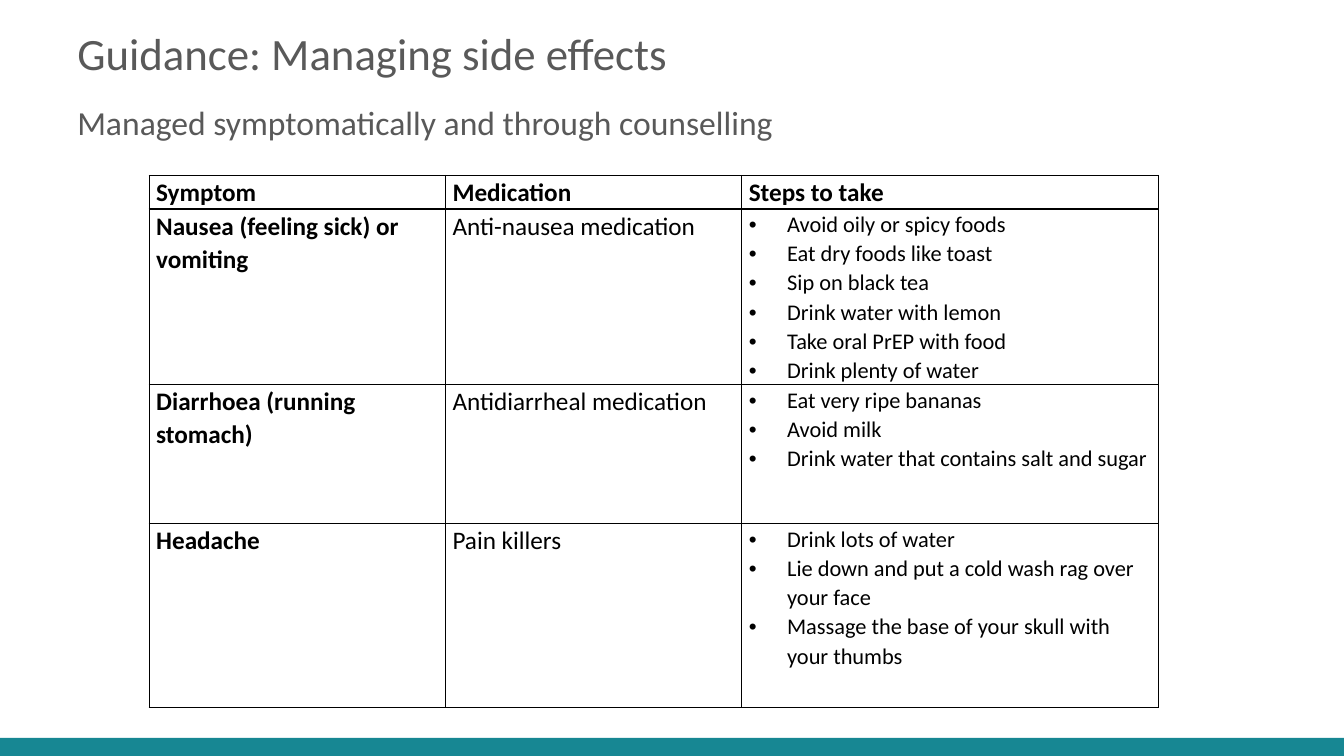
from lxml import etree
from pptx import Presentation
from pptx.dml.color import RGBColor
from pptx.enum.shapes import MSO_SHAPE
from pptx.enum.text import MSO_ANCHOR, MSO_AUTO_SIZE, PP_ALIGN
from pptx.oxml.ns import qn
from pptx.util import Inches, Pt

RECTANGLE = MSO_SHAPE.RECTANGLE
TOP = MSO_ANCHOR.TOP
LEFT = PP_ALIGN.LEFT
NO_AUTOFIT = MSO_AUTO_SIZE.NONE

WHITE = RGBColor(0xFF, 0xFF, 0xFF)
BLACK = RGBColor(0x00, 0x00, 0x00)
GREY = RGBColor(0x59, 0x59, 0x59)
TEAL = RGBColor(0x17, 0x87, 0x93)

FONT = "Calibri"
GRID_COLUMNS, GRID_ROWS = 80, 45
TITLE_ONLY = 5

TITLE_LINES = [
    ("Guidance: Managing side effects", 32),
    ("Managed symptomatically and through counselling", 24),
]
HEADINGS = ["Symptom", "Medication", "Steps to take"]
SIDE_EFFECTS = [
    ("Nausea (feeling sick) or vomiting", "Anti-nausea medication",
     ["Avoid oily or spicy foods", "Eat dry foods like toast", "Sip on black tea",
      "Drink water with lemon", "Take oral PrEP with food", "Drink plenty of water"]),
    ("Diarrhoea (running stomach)", "Antidiarrheal medication",
     ["Eat very ripe bananas", "Avoid milk",
      "Drink water that contains salt and sugar"]),
    ("Headache", "Pain killers",
     ["Drink lots of water", "Lie down and put a cold wash rag over your face",
      "Massage the base of your skull with your thumbs"]),
]
COLUMN_WIDTHS = [17.64, 17.64, 24.78]
ROW_HEIGHTS = [2, 10.38, 8.28, 10.92]


class SlideBuilder:
    """Holds the style and the current slide; lengths are grid columns and rows."""

    def __init__(self, presentation):
        self.column = presentation.slide_width / GRID_COLUMNS
        self.row = presentation.slide_height / GRID_ROWS
        self.slide = presentation.slides.add_slide(presentation.slide_layouts[TITLE_ONLY])

    def across(self, columns):
        return round(columns * self.column)

    def down(self, rows):
        return round(rows * self.row)

    def box(self, left, top, width, height):
        return self.across(left), self.down(top), self.across(width), self.down(height)

    def run(self, paragraph, text, size, color, bold=False):
        run = paragraph.add_run()
        run.text = text
        font = run.font
        font.name, font.size, font.bold = FONT, Pt(size), bold
        font.color.rgb = color

    def title(self, lines, *place):
        shape = self.slide.shapes.title
        shape.left, shape.top, shape.width, shape.height = self.box(*place)
        frame = shape.text_frame
        frame.auto_size = NO_AUTOFIT
        frame.word_wrap = True
        frame.vertical_anchor = TOP
        paragraph = frame.paragraphs[0]
        paragraph.alignment = LEFT
        paragraph.line_spacing = Pt(44.8)
        paragraph.space_before = Pt(0)
        for index, (text, size) in enumerate(lines):
            if index:
                paragraph.add_line_break()
            self.run(paragraph, text, size, GREY)

    def bar(self, color, *place):
        shape = self.slide.shapes.add_shape(RECTANGLE, *self.box(*place))
        shape.shadow.inherit = False
        shape.fill.solid()
        shape.fill.fore_color.rgb = color
        shape.line.fill.background()

    def table(self, left, top, widths, heights):
        place = self.box(left, top, sum(widths), sum(heights))
        table = self.slide.shapes.add_table(len(heights), len(widths), *place).table
        table.first_row = table.horz_banding = False
        for column, width in zip(table.columns, widths):
            column.width = self.across(width)
        for row, height in zip(table.rows, heights):
            row.height = self.down(height)
        return table

    def cell(self, cell, texts, size=18, bold=False, bullets=False):
        cell.fill.solid()
        cell.fill.fore_color.rgb = WHITE
        cell.margin_left = cell.margin_right = Inches(0.07)
        cell.margin_top = cell.margin_bottom = 0
        cell.vertical_anchor = TOP
        self.borders(cell)
        frame = cell.text_frame
        for index, text in enumerate(texts):
            paragraph = frame.add_paragraph() if index else frame.paragraphs[0]
            paragraph.line_spacing = 1.07
            if bullets:
                self.bullet(paragraph)
            self.run(paragraph, text, size, BLACK, bold)

    def borders(self, cell):
        properties = cell._tc.get_or_add_tcPr()
        for index, side in enumerate(("lnL", "lnR", "lnT", "lnB")):
            line = etree.Element(qn(f"a:{side}"), w=str(Pt(1)))
            fill = etree.SubElement(line, qn("a:solidFill"))
            etree.SubElement(fill, qn("a:srgbClr"), val=str(BLACK))
            properties.insert(index, line)

    def bullet(self, paragraph):
        properties = paragraph._p.get_or_add_pPr()
        indent = Inches(0.38)
        properties.set("marL", str(indent))
        properties.set("indent", str(-indent))
        etree.SubElement(properties, qn("a:buFont"), typeface="Arial")
        etree.SubElement(properties, qn("a:buChar"), char="•")


def main():
    presentation = Presentation()
    presentation.slide_width = Inches(13.33)
    presentation.slide_height = Inches(7.5)
    builder = SlideBuilder(presentation)

    # Footer band and title
    builder.bar(TEAL, 0, 43.92, GRID_COLUMNS, GRID_ROWS - 43.92)
    builder.title(TITLE_LINES, 4, 0.72, 72, 6.36)

    # Side effects table
    table = builder.table(8.88, 10.44, COLUMN_WIDTHS, ROW_HEIGHTS)
    for index, heading in enumerate(HEADINGS):
        builder.cell(table.cell(0, index), [heading], bold=True)
    for index, (symptom, medication, steps) in enumerate(SIDE_EFFECTS, start=1):
        builder.cell(table.cell(index, 0), [symptom], bold=True)
        builder.cell(table.cell(index, 1), [medication])
        builder.cell(table.cell(index, 2), steps, size=16, bullets=True)

    presentation.save("out.pptx")


if __name__ == "__main__":
    main()
